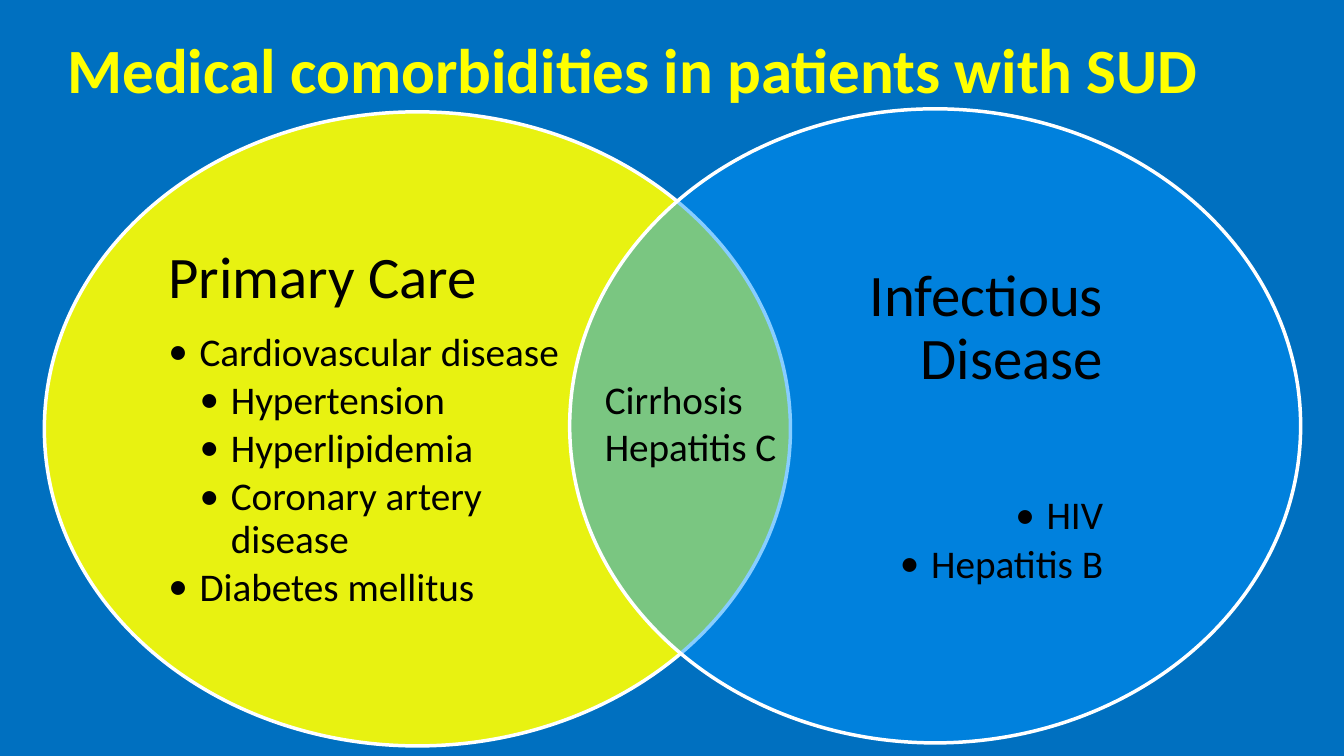
from lxml import etree
from pptx import Presentation
from pptx.dml.color import RGBColor
from pptx.enum.shapes import MSO_SHAPE
from pptx.enum.text import MSO_ANCHOR, PP_ALIGN
from pptx.oxml.ns import qn
from pptx.util import Inches, Pt

FONT = "Calibri"
BLACK = "000000"
HEADING_SIZE, ITEM_SIZE = 42, 28
ITEM_GAP = 4.2
INDENT = 0.31


def color(hex_string):
    return RGBColor.from_string(hex_string)


def add_text_box(slide, box):
    shape = slide.shapes.add_textbox(*map(Inches, box))
    frame = shape.text_frame
    frame.word_wrap = True
    frame.vertical_anchor = MSO_ANCHOR.MIDDLE
    return frame


def format_paragraph(paragraph, size, hex_string=BLACK, bold=False):
    for run in paragraph.runs:
        run.font.name = FONT
        run.font.size = Pt(size)
        run.font.bold = bold
        run.font.color.rgb = color(hex_string)


def add_bullet(paragraph, level):
    paragraph.level = level
    properties = paragraph._p.get_or_add_pPr()
    properties.set("marL", str(Inches(INDENT * level)))
    properties.set("indent", str(Inches(-INDENT)))
    etree.SubElement(properties, qn("a:buFont")).set("typeface", FONT)
    etree.SubElement(properties, qn("a:buChar")).set("char", "•")


def add_title(slide, box, text):
    paragraph = add_text_box(slide, box).paragraphs[0]
    paragraph.text = text
    paragraph.line_spacing = 0.9
    format_paragraph(paragraph, 45, "FFFF00", bold=True)


def add_circle(slide, box, fill, opacity):
    circle = slide.shapes.add_shape(MSO_SHAPE.OVAL, *map(Inches, box))
    circle.shadow.inherit = False
    circle.fill.solid()
    circle.fill.fore_color.rgb = color(fill)
    fill_color = circle.fill._xPr.find(qn("a:solidFill"))[0]
    etree.SubElement(fill_color, qn("a:alpha")).set("val", str(opacity * 1000))
    circle.line.color.rgb = color("FFFFFF")
    circle.line.width = Pt(2.5)


def add_topic(slide, box, margins, heading, items, heading_gap, alignment):
    """Place a heading with bulleted (level, text) items below it."""
    frame = add_text_box(slide, box)
    frame.margin_left, frame.margin_right = map(Inches, margins)
    frame.margin_top = frame.margin_bottom = 0
    frame.text = "\n".join([heading] + [text for _, text in items])
    for paragraph in frame.paragraphs:
        paragraph.alignment = alignment
        paragraph.line_spacing = 0.9
        paragraph.space_after = Pt(ITEM_GAP)
        format_paragraph(paragraph, ITEM_SIZE)
    title, *bullets = frame.paragraphs
    title.space_after = Pt(heading_gap)
    format_paragraph(title, HEADING_SIZE)
    for paragraph, (level, _) in zip(bullets, items):
        add_bullet(paragraph, level)


def add_venn(slide, box):
    left, top, width, height = box
    circle_height = 6.29
    text_top, text_height = top + 0.74, 4.81

    # Left circle
    add_circle(slide, (left, top + 0.03, 7.4, circle_height), "FFFF00", 91)
    add_topic(slide, (left + 1.03, text_top + 0.03, 4.26, text_height),
              (0.2, 0), "Primary Care",
              [(1, "Cardiovascular disease"), (2, "Hypertension"),
               (2, "Hyperlipidemia"), (2, "Coronary artery disease"),
               (1, "Diabetes mellitus")],
              14.7, PP_ALIGN.LEFT)

    # Right circle
    right_width = 7.25
    right_left = left + width - right_width
    add_circle(slide, (right_left, top, right_width, circle_height), "0096FF", 47)
    add_topic(slide, (right_left + 2.05, text_top, 4.18, text_height),
              (0, 0.94), "Infectious Disease", [(1, "HIV"), (1, "Hepatitis B")],
              74, PP_ALIGN.RIGHT)

    # Shared conditions
    frame = add_text_box(slide, (left + 5.46, top + 2.59, 2.69, 1.04))
    frame.text = "Cirrhosis\nHepatitis C"
    for paragraph in frame.paragraphs:
        format_paragraph(paragraph, ITEM_SIZE)


def main():
    presentation = Presentation()
    presentation.slide_width = Inches(13.33)
    presentation.slide_height = Inches(7.5)
    slide = presentation.slides.add_slide(presentation.slide_layouts[6])
    slide.background.fill.solid()
    slide.background.fill.fore_color.rgb = color("0070C0")
    add_title(slide, (0.57, 0, 11.5, 1.45),
              "Medical comorbidities in patients with SUD")
    add_venn(slide, (0.44, 1.08, 12.46, 6.32))
    presentation.save("out.pptx")


if __name__ == "__main__":
    main()
